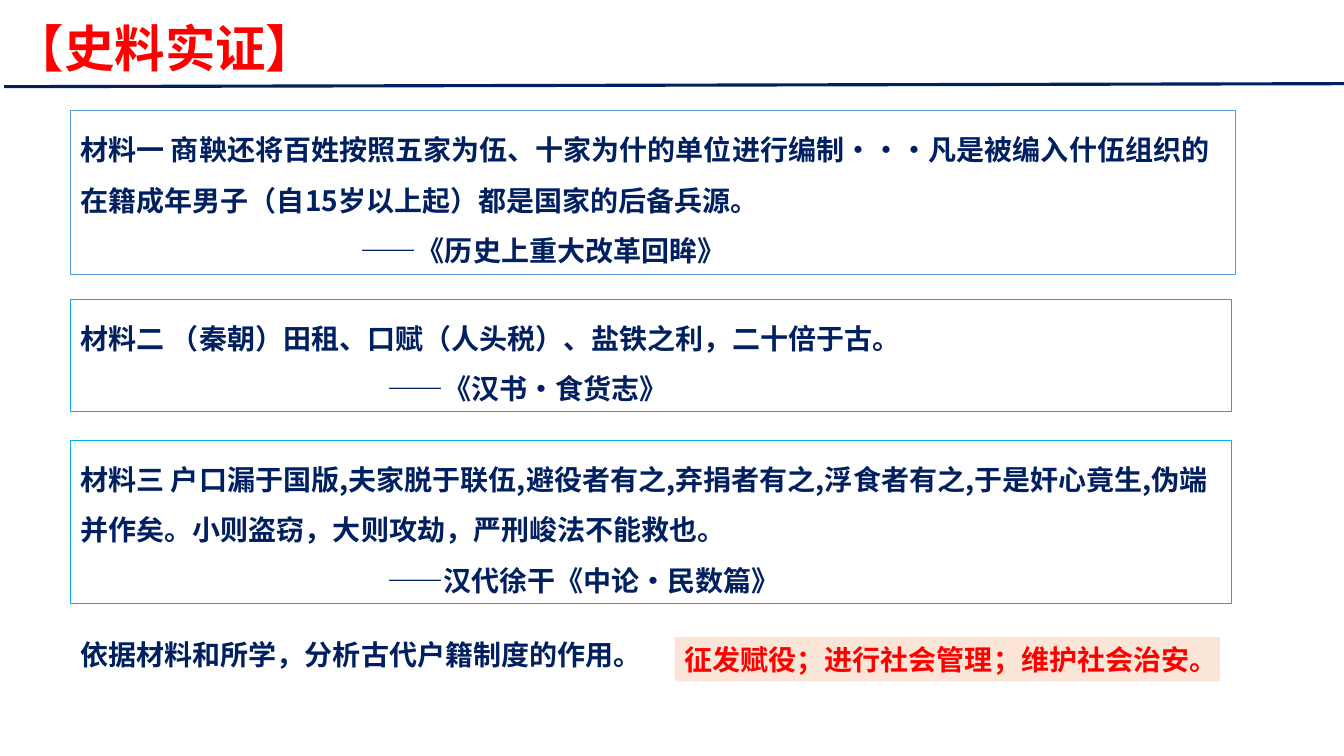
from lxml.etree import SubElement
from pptx import Presentation
from pptx.dml.color import RGBColor
from pptx.enum.shapes import MSO_CONNECTOR, MSO_SHAPE
from pptx.enum.text import MSO_ANCHOR, MSO_AUTO_SIZE, PP_ALIGN
from pptx.oxml.ns import qn
from pptx.util import Inches, Pt

NAVY = "002060"
RED = "FF0000"
SKY = "00B0F0"
BODY_FONT = "Noto Sans CJK SC"
TITLE_FONT = "Noto Sans CJK JP"
LEFT = 0.7

MATERIALS = [
    (1.1, 11.55, 1.62, "5B9BD5", 2.78,
     "材料一 商鞅还将百姓按照五家为伍、十家为什的单位进行编制···凡是被编入什伍组织的在籍成年男子（自15岁以上起）都是国家的后备兵源。",
     "——《历史上重大改革回眸》"),
    (2.97, 11.51, 1.11, SKY, 3.04,
     "材料二 （秦朝）田租、口赋（人头税）、盐铁之利，二十倍于古。",
     "——《汉书·食货志》"),
    (4.37, 11.51, 1.62, SKY, 3.04,
     "材料三 户口漏于国版,夫家脱于联伍,避役者有之,弃捐者有之,浮食者有之,于是奸心竟生,伪端并作矣。小则盗窃，大则攻劫，严刑峻法不能救也。",
     "——汉代徐干《中论・民数篇》"),
]


def color(value):
    """Turn a hex string into a colour."""
    return RGBColor.from_string(value)


def add_run(paragraph, text, hex_color, size=20, font=BODY_FONT):
    """Add a bold run in the given font for Latin and Chinese text."""
    run = paragraph.add_run()
    run.text = text
    run.font.size = Pt(size)
    run.font.bold = True
    run.font.name = font
    run.font.color.rgb = color(hex_color)
    SubElement(run.font._element, qn("a:ea")).set("typeface", font)


def add_box(slide, left, top, width, height, fill=None, outline=None):
    """Add a rectangle and return its text frame."""
    shape = slide.shapes.add_shape(
        MSO_SHAPE.RECTANGLE, Inches(left), Inches(top), Inches(width), Inches(height))
    shape.shadow.inherit = False
    if fill:
        shape.fill.solid()
        shape.fill.fore_color.rgb = color(fill)
    else:
        shape.fill.background()
    if outline:
        shape.line.color.rgb = color(outline)
        shape.line.width = Pt(0.75)
    else:
        shape.line.fill.background()
    frame = shape.text_frame
    frame.word_wrap = True
    frame.vertical_anchor = MSO_ANCHOR.TOP
    frame.auto_size = MSO_AUTO_SIZE.SHAPE_TO_FIT_TEXT
    frame.paragraphs[0].alignment = PP_ALIGN.LEFT
    return frame


def add_text(slide, left, top, width, height, wrap=True):
    """Add a text box and return its text frame."""
    frame = slide.shapes.add_textbox(
        Inches(left), Inches(top), Inches(width), Inches(height)).text_frame
    frame.word_wrap = wrap
    frame.auto_size = MSO_AUTO_SIZE.SHAPE_TO_FIT_TEXT
    return frame


def add_material(slide, top, width, height, outline, indent, quotation, citation):
    """Add a framed quotation with its indented citation."""
    frame = add_box(slide, LEFT, top, width, height, outline=outline)
    quote = frame.paragraphs[0]
    credit = frame.add_paragraph()
    credit._p.get_or_add_pPr().set("marL", str(Inches(indent)))
    for paragraph, text in ((quote, quotation), (credit, citation)):
        paragraph.alignment = PP_ALIGN.LEFT
        paragraph.line_spacing = 1.5
        add_run(paragraph, text, NAVY)


def add_rule(slide):
    """Add the line under the title."""
    rule = slide.shapes.add_connector(
        MSO_CONNECTOR.STRAIGHT, Inches(0.04), Inches(0.86), Inches(13.33), Inches(0.83))
    rule.line.color.rgb = color(NAVY)
    rule.line.width = Pt(2.25)
    SubElement(rule._element.spPr, qn("a:effectLst"))


def main():
    """Build and save the slide."""
    presentation = Presentation()
    presentation.slide_width = Inches(13.33)
    presentation.slide_height = Inches(7.5)
    slide = presentation.slides.add_slide(presentation.slide_layouts[6])

    title = add_text(slide, 0.04, 0.12, 3.24, 0.71, wrap=False).paragraphs[0]
    title.alignment = PP_ALIGN.JUSTIFY
    add_run(title, "【史料实证】", RED, 36, TITLE_FONT)
    add_rule(slide)

    for material in MATERIALS:
        add_material(slide, *material)

    question = add_text(slide, LEFT, 6.28, 5.99, 0.44)
    add_run(question.paragraphs[0], "依据材料和所学，分析古代户籍制度的作用。", NAVY)
    answer = add_box(slide, 6.69, 6.32, 5.41, 0.44, fill="FBE5D6")
    add_run(answer.paragraphs[0], "征发赋役；进行社会管理；维护社会治安。", RED)

    presentation.save("out.pptx")


if __name__ == "__main__":
    main()
